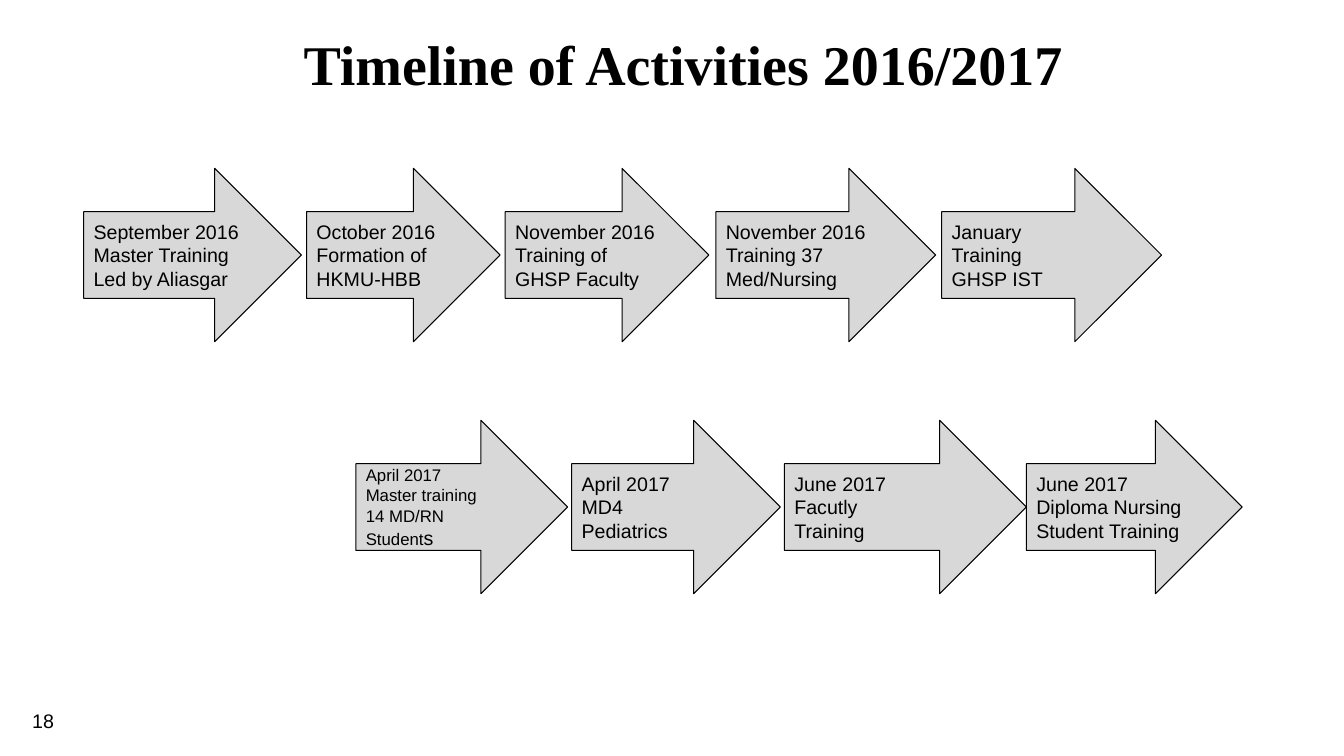
from pptx import Presentation
from pptx.dml.color import RGBColor
from pptx.enum.shapes import MSO_SHAPE as Shape
from pptx.enum.text import MSO_ANCHOR as Anchor, PP_ALIGN as Align
from pptx.util import Inches, Pt

BLACK, GREY = "000000", "D8D8D8"
ARROW_HEIGHT = 1.72
ROWS = [
    (1.67, [
        (0.83, 2.16, ["September 2016", "Master Training", "Led by Aliasgar"]),
        (3.04, 1.92, ["October 2016", "Formation of", "HKMU-HBB"]),
        (5.01, 2.02, ["November 2016", "Training of", "GHSP Faculty"]),
        (7.1, 2.18, ["November 2016", "Training 37", "Med/Nursing"]),
        (9.34, 2.18, ["January", "Training", "GHSP IST"]),
    ]),
    (4.17, [
        (3.53, 2.1, [[("April 2017", 12)], [("Master training", 12)],
                     [("14 MD/RN", 12)], [("Student", 12), ("s", 14)]]),
        (5.67, 2.07, ["April 2017", "MD4", "Pediatrics"]),
        (7.78, 2.4, ["June 2017", "Facutly", "Training"]),
        (10.18, 2.14, ["June 2017", "Diploma Nursing Student Training"]),
    ]),
]


def color(value):
    """Turn a hex string into a colour."""
    return RGBColor.from_string(value)


def set_frame(frame, anchor, vertical_inset):
    """Set wrapping, anchor and insets of a text frame."""
    frame.word_wrap = True
    frame.vertical_anchor = anchor
    frame.margin_left = frame.margin_right = Inches(0.1)
    frame.margin_top = frame.margin_bottom = Inches(vertical_inset)


def add_span(para, text, size, font="Arial", bold=False):
    """Add one formatted run to a paragraph."""
    span = para.add_run()
    span.text = text
    span.font.name = font
    span.font.size = Pt(size)
    span.font.bold = bold
    span.font.color.rgb = color(BLACK)


def add_title(page, text):
    """Place and format the slide title."""
    title = page.shapes.title
    title.left, title.top = Inches(0.29), Inches(0)
    title.width, title.height = Inches(12.97), Inches(1.25)
    set_frame(title.text_frame, Anchor.MIDDLE, 0.1)
    para = title.text_frame.paragraphs[0]
    para.alignment = Align.CENTER
    add_span(para, text, 40, "Times New Roman", True)


def add_arrow(page, left, top, width, lines):
    """Add a timeline arrow with one paragraph per line."""
    arrow = page.shapes.add_shape(Shape.RIGHT_ARROW, Inches(left), Inches(top),
                                  Inches(width), Inches(ARROW_HEIGHT))
    arrow.shadow.inherit = False
    arrow.fill.solid()
    arrow.fill.fore_color.rgb = color(GREY)
    arrow.line.color.rgb = color(BLACK)
    arrow.line.width = Pt(0.75)
    frame = arrow.text_frame
    set_frame(frame, Anchor.MIDDLE, 0.1)
    for index, line in enumerate(lines):
        para = frame.add_paragraph() if index else frame.paragraphs[0]
        para.alignment = Align.LEFT
        for text, size in [(line, 14)] if isinstance(line, str) else line:
            add_span(para, text, size)


def add_page_number(page, number):
    """Add the page number at the bottom left."""
    box = page.shapes.add_textbox(Inches(0.22), Inches(6.98), Inches(0.78), Inches(0.52))
    set_frame(box.text_frame, Anchor.TOP, 0.05)
    add_span(box.text_frame.paragraphs[0], number, 14)


def main():
    """Build the timeline slide and save it."""
    deck = Presentation()
    deck.slide_width, deck.slide_height = Inches(13.33), Inches(7.5)
    page = deck.slides.add_slide(deck.slide_layouts[5])
    add_title(page, "Timeline of Activities 2016/2017")
    for top, arrows in ROWS:
        for left, width, lines in arrows:
            add_arrow(page, left, top, width, lines)
    add_page_number(page, "18")
    deck.save("out.pptx")


if __name__ == "__main__":
    main()
